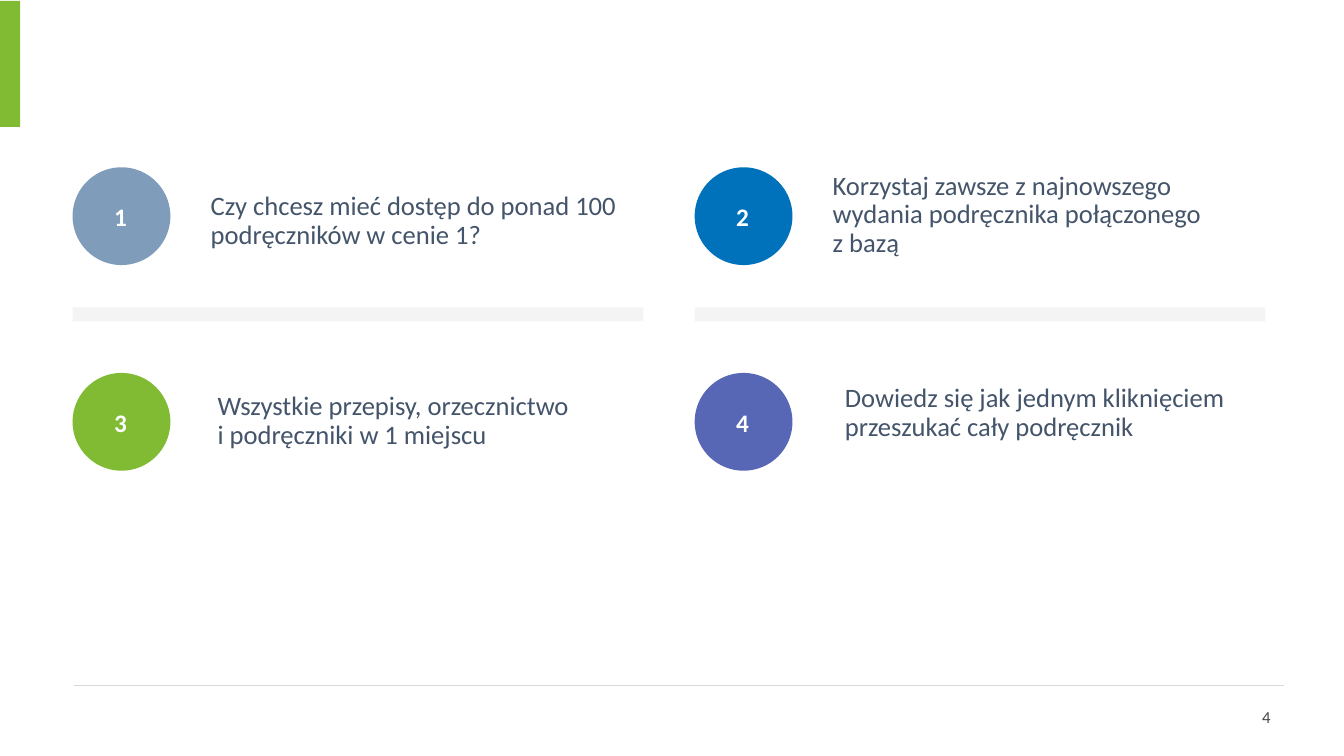
from dataclasses import dataclass

from lxml.etree import SubElement
from pptx import Presentation
from pptx.dml.color import RGBColor
from pptx.enum.shapes import MSO_CONNECTOR as Conn, MSO_SHAPE as Kind
from pptx.enum.text import MSO_ANCHOR as Anchor, PP_ALIGN as Align
from pptx.oxml.ns import qn
from pptx.util import Inches, Pt

GREEN = RGBColor(0x81, 0xBB, 0x33)
STEEL = RGBColor(0x7F, 0x9C, 0xBB)
BLUE = RGBColor(0x00, 0x72, 0xBB)
VIOLET = RGBColor(0x57, 0x66, 0xB5)
SLATE = RGBColor(0x44, 0x54, 0x6A)
GRAY = RGBColor(0x47, 0x47, 0x47)
PALE = RGBColor(0xF4, 0xF4, 0xF4)
RULE = RGBColor(0xD9, 0xD9, 0xD9)
WHITE = RGBColor(0xFF, 0xFF, 0xFF)

FONT = "Calibri"
COLS = (0.72, 6.89)
ROWS = (1.66, 3.7)
DISC = 0.97


@dataclass(frozen=True)
class Point:
    text: str
    color: RGBColor
    left: float
    top: float
    width: float
    pad: float = 0.1


POINTS = (
    Point("Czy chcesz mieć dostęp do ponad 100 podręczników w cenie 1?",
          STEEL, 2.09, 1.86, 4.51, pad=0),
    Point("Korzystaj zawsze z najnowszego wydania podręcznika połączonego\nz bazą",
          BLUE, 8.16, 1.66, 4.31),
    Point("Wszystkie przepisy, orzecznictwo\ni podręczniki w 1 miejscu",
          GREEN, 2.06, 3.85, 4.31),
    Point("Dowiedz się jak jednym kliknięciem przeszukać cały podręcznik",
          VIOLET, 8.38, 3.77, 4.51, pad=0),
)


def add_text(shapes, text: str, left: float, top: float, width: float,
             height: float, *, size: float, color: RGBColor,
             bold: bool = False, align: Align = Align.LEFT,
             anchor: Anchor = Anchor.TOP, pad: float = 0.1,
             wrap: bool = True, lead: float = 1.0) -> None:
    box = shapes.add_textbox(Inches(left), Inches(top),
                             Inches(width), Inches(height))
    frame = box.text_frame
    frame.word_wrap = wrap
    frame.vertical_anchor = anchor
    frame.margin_left = Inches(pad)
    para = frame.paragraphs[0]
    para.text = text
    para.alignment = align
    para.line_spacing = lead
    for run in para.runs:
        font = run.font
        font.name, font.size, font.bold = FONT, Pt(size), bold
        font.color.rgb = color


def add_fill(shapes, kind: Kind, left: float, top: float, width: float,
             height: float, color: RGBColor) -> None:
    """Add a flat shape without outline or shadow."""
    shape = shapes.add_shape(kind, Inches(left), Inches(top),
                             Inches(width), Inches(height))
    shape.shadow.inherit = False
    shape.fill.solid()
    shape.fill.fore_color.rgb = color
    shape.line.fill.background()


def add_rule(shapes, left: float, right: float, top: float) -> None:
    line = shapes.add_connector(Conn.STRAIGHT, Inches(left), Inches(top),
                                Inches(right), Inches(top))
    line.line.color.rgb = RULE
    line.line.width = Pt(1.25)
    SubElement(line._element.spPr, qn("a:effectLst"))


def add_badge(shapes, num: int, left: float, top: float,
              color: RGBColor) -> None:
    """Group a disc with its number."""
    group = shapes.add_group_shape().shapes
    add_fill(group, Kind.OVAL, left, top, DISC, DISC, color)
    add_text(group, str(num), left + 0.31, top + 0.29, 0.33, 0.4, size=18,
             color=WHITE, bold=True, align=Align.CENTER, wrap=False)


def main() -> None:
    deck = Presentation()
    deck.slide_width, deck.slide_height = Inches(13.33), Inches(7.5)
    shapes = deck.slides.add_slide(deck.slide_layouts[6]).shapes

    add_fill(shapes, Kind.RECTANGLE, 0, 0.01, 0.2, 1.25, GREEN)
    add_rule(shapes, 0.73, 12.74, 6.8)
    add_text(shapes, "4", 11.99, 6.91, 0.71, 0.4, size=12, color=GRAY,
             align=Align.RIGHT, anchor=Anchor.MIDDLE)

    for left in COLS:
        add_fill(shapes, Kind.RECTANGLE, left, 3.05, 5.66, 0.14, PALE)
    for i, point in enumerate(POINTS):
        row, col = divmod(i, len(COLS))
        add_badge(shapes, i + 1, COLS[col], ROWS[row], point.color)
        add_text(shapes, point.text, point.left, point.top, point.width, 0.74,
                 size=19, color=SLATE, pad=point.pad, lead=0.9)

    deck.save("out.pptx")


if __name__ == "__main__":
    main()
